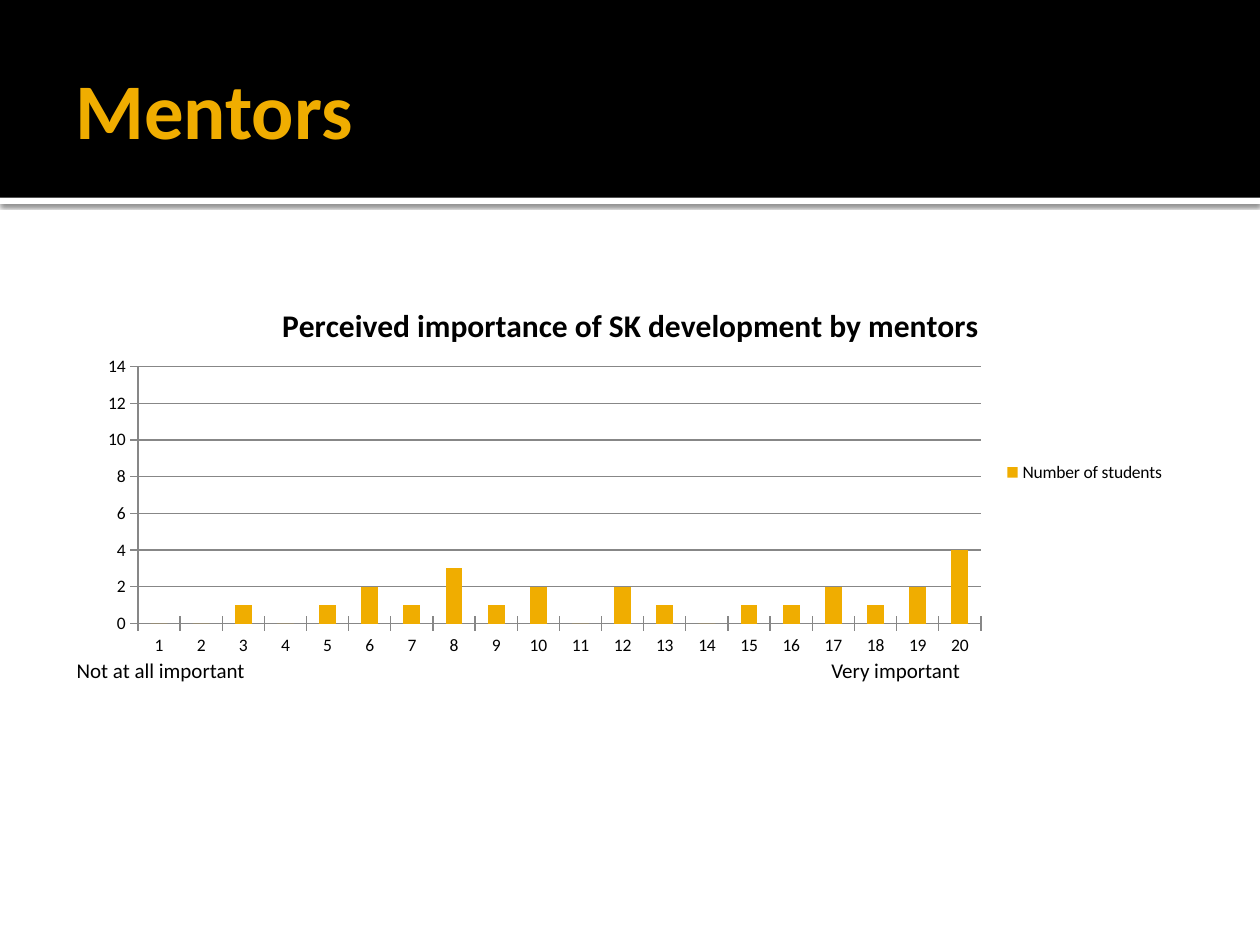
"""Build the Mentors slide: a banner title over a column chart of perceived importance."""
from typing import NamedTuple

from lxml import etree
from pptx import Presentation
from pptx import util as u
from pptx.chart import data as chart_data
from pptx.dml import color
from pptx.enum import chart as charts, shapes, text
from pptx.oxml import parse_xml
from pptx.oxml.ns import nsdecls, qn

FONT = "Calibri"
GOLD, BLACK, WHITE, GRAY = "F0AD00", "000000", "FFFFFF", "878787"
STUDENTS = (0, 0, 1, 0, 1, 2, 1, 3, 1, 2, 0, 2, 1, 0, 1, 1, 2, 1, 2, 4)
PLOT_AREA = {"x": 0.05, "y": 0.22, "w": 0.77, "h": 0.68}


class Box(NamedTuple):
    left: float
    top: float
    width: float
    height: float

    def in_points(self) -> list[u.Length]:
        return [u.Pt(length) for length in self]


class Band(NamedTuple):
    box: Box
    fill: str
    shadowed: bool


class ScaleEnd(NamedTuple):
    wording: str
    left: float


BANDS = (
    Band(Box(0, 113, 720, 3.6), WHITE, True),
    Band(Box(0, 0, 720, 113), BLACK, False),
)
SCALE_ENDS = (ScaleEnd("Not at all important", 36.7), ScaleEnd("Very important", 468))


def rgb(hex_color: str) -> color.RGBColor:
    return color.RGBColor.from_string(hex_color)


def set_font(font, size: float, hex_color: str = BLACK, bold: bool = False) -> None:
    font.name, font.size, font.bold = FONT, u.Pt(size), bold
    font.color.rgb = rgb(hex_color)


def add_text(slide, wording: str, box: Box, *, size: float, hex_color: str = BLACK,
             bold: bool = False, anchor=text.MSO_ANCHOR.TOP, right_inset: float = 7.2) -> None:
    frame = slide.shapes.add_textbox(*box.in_points()).text_frame
    frame.word_wrap = True
    frame.vertical_anchor = anchor
    frame.margin_right = u.Pt(right_inset)
    run = frame.paragraphs[0].add_run()
    run.text = wording
    set_font(run.font, size, hex_color, bold)


def add_band(slide, band: Band) -> None:
    strip = slide.shapes.add_shape(shapes.MSO_SHAPE.RECTANGLE, *band.box.in_points())
    strip.shadow.inherit = False
    strip.fill.solid()
    strip.fill.fore_color.rgb = rgb(band.fill)
    strip.line.fill.background()
    if band.shadowed:
        effects = strip._element.spPr.find(qn("a:effectLst"))
        effects.append(parse_xml(
            f'<a:outerShdw {nsdecls("a")} blurRad="{u.Pt(2.5)}" dist="{u.Pt(0.8)}" '
            f'dir="5400000" algn="tl" rotWithShape="0"><a:srgbClr val="{BLACK}">'
            '<a:alpha val="60000"/></a:srgbClr></a:outerShdw>'))


def fix_plot_area(chart) -> None:
    plot_area = chart._chartSpace.chart.plotArea
    for old in plot_area.findall(qn("c:layout")):
        plot_area.remove(old)
    layout = etree.Element(qn("c:layout"))
    manual = etree.SubElement(layout, qn("c:manualLayout"))
    settings = {"layoutTarget": "inner", "xMode": "edge", "yMode": "edge", **PLOT_AREA}
    for name, value in settings.items():
        etree.SubElement(manual, qn(f"c:{name}")).set("val", str(value))
    plot_area.insert(0, layout)


def add_importance_chart(slide, box: Box) -> None:
    ratings = chart_data.CategoryChartData()
    ratings.categories = [str(rating) for rating in range(1, len(STUDENTS) + 1)]
    ratings.add_series("Number of students", STUDENTS)
    chart = slide.shapes.add_chart(
        charts.XL_CHART_TYPE.COLUMN_CLUSTERED, *box.in_points(), ratings).chart
    set_font(chart.font, 10)

    chart.has_title = True
    heading = chart.chart_title.text_frame.paragraphs[0].add_run()
    heading.text = "Perceived importance of SK development by mentors"
    set_font(heading.font, 18, bold=True)
    chart.chart_title.include_in_layout = False

    chart.has_legend = True
    chart.legend.position = charts.XL_LEGEND_POSITION.RIGHT
    chart.legend.include_in_layout = False

    columns = chart.plots[0]
    columns.gap_width = 150
    columns.vary_by_categories = False
    columns.series[0].format.fill.solid()
    columns.series[0].format.fill.fore_color.rgb = rgb(GOLD)

    counts = chart.value_axis
    counts.minimum_scale, counts.maximum_scale, counts.major_unit = 0, 14, 2
    counts.has_major_gridlines = True
    for axis in (chart.category_axis, counts):
        axis.major_tick_mark = charts.XL_TICK_MARK.CROSS
    for ruled in (chart.category_axis, counts, counts.major_gridlines):
        ruled.format.line.color.rgb = rgb(GRAY)
        ruled.format.line.width = u.Pt(0.75)
    fix_plot_area(chart)


def main() -> None:
    deck = Presentation()
    deck.slide_width, deck.slide_height = u.Pt(720), u.Pt(540)
    slide = deck.slides.add_slide(deck.slide_layouts[6])
    for band in BANDS:
        add_band(slide, band)
    add_text(slide, "Mentors", Box(36, 12.2, 648, 98.6), size=45, hex_color=GOLD,
             bold=True, anchor=text.MSO_ANCHOR.MIDDLE, right_inset=3.6)
    add_importance_chart(slide, Box(47.5, 162, 625.7, 216))
    for end in SCALE_ENDS:
        add_text(slide, end.wording, Box(end.left, 372.2, 136, 21.8), size=12)
    deck.save("out.pptx")


if __name__ == "__main__":
    main()
